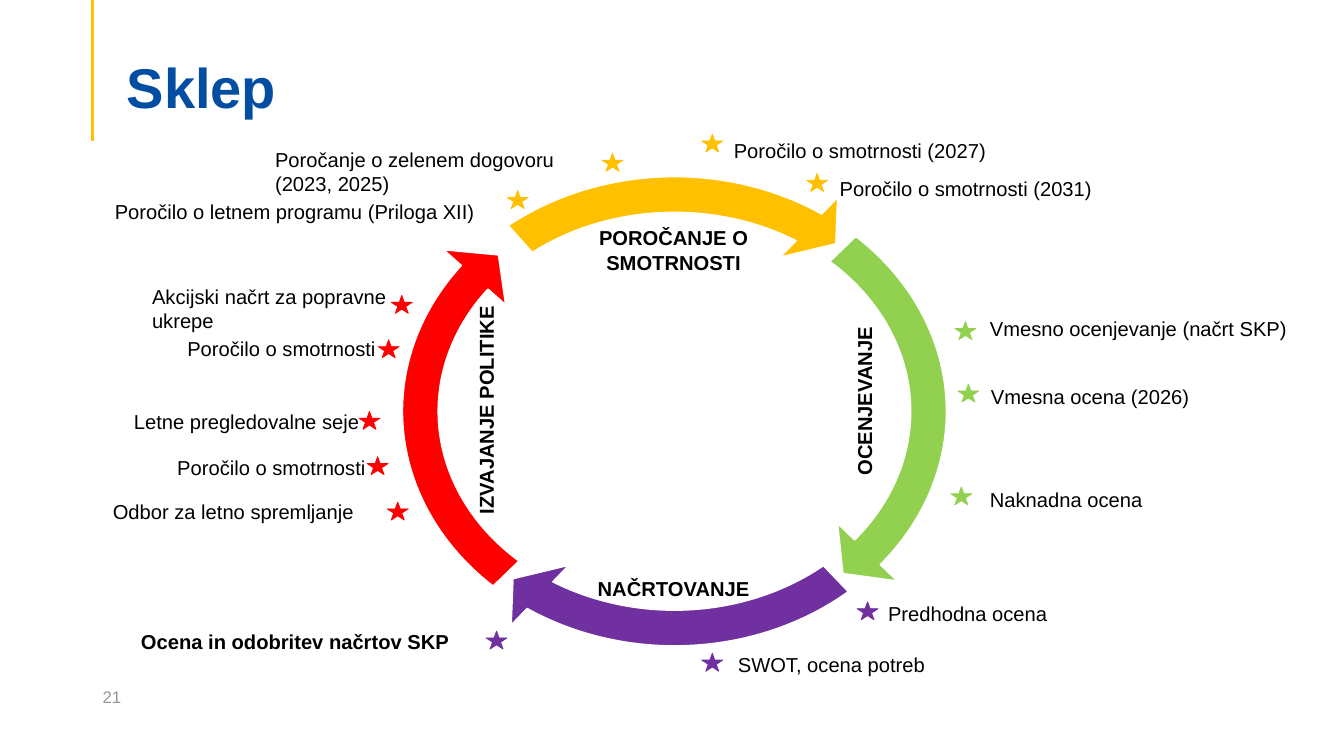
"""Build the closing slide: the policy cycle with its milestones."""
from pptx import Presentation
from pptx.dml.color import RGBColor
from pptx.enum.shapes import MSO_CONNECTOR, MSO_SHAPE
from pptx.enum.text import MSO_ANCHOR, PP_ALIGN
from pptx.oxml.ns import qn
from pptx.util import Inches, Pt
from lxml import etree

COLORS = {
    "yellow": "FFC000", "green": "92D050", "purple": "7030A0", "red": "FF0000",
    "blue": "034EA2", "gray": "979797", "black": "000000", "white": "FFFFFF",
}


def rgb(name):
    return RGBColor.from_string(COLORS[name])


def add_text(s, text, x, y, w, h, size=14.4, color="black", bold=False):
    sp = s.shapes.add_textbox(Inches(x), Inches(y), Inches(w), Inches(h))
    tf = sp.text_frame
    tf.word_wrap = True
    r = tf.paragraphs[0].add_run()
    r.text = text
    r.font.name = "Arial"
    r.font.size = Pt(size)
    r.font.bold = bold
    r.font.color.rgb = rgb(color)
    return sp


prs = Presentation()
prs.slide_width, prs.slide_height = Inches(13.33), Inches(7.5)
s = prs.slides.add_slide(prs.slide_layouts[6])

rule = s.shapes.add_connector(
    MSO_CONNECTOR.STRAIGHT, Inches(0.92), Inches(0), Inches(0.92), Inches(1.4))
rule.line.color.rgb = rgb("yellow")
rule.line.width = Pt(2.25)
etree.SubElement(rule._element.spPr, qn("a:effectLst"))

add_text(s, "Sklep", 1.16, 0.47, 6.16, 0.77, 40, "blue", True)

arrows = [
    ("green", 21.701, 189.637),
    ("purple", 75.713, 27.637),
    ("red", 128.318, 81.637),
    ("yellow", 183.701, 136.918),
]
for color, end, start in arrows:
    sp = s.shapes.add_shape(
        MSO_SHAPE.CIRCULAR_ARROW, Inches(3.76), Inches(1.52), Inches(5.86), Inches(5.12))
    for i, value in enumerate((0.069, 4.65, end, start, 0.08)):
        sp.adjustments[i] = value
    sp.shadow.inherit = False
    sp.fill.solid()
    sp.fill.fore_color.rgb = rgb(color)
    sp.line.color.rgb = rgb("white")
    sp.line.width = Pt(1)

phases = [
    ("NAČRTOVANJE", 5.24, 5.67, 2.88, 0.34, 0),
    ("IZVAJANJE POLITIKE", 3.56, 3.9, 2.52, 0.34, 270),
    ("OCENJEVANJE", 7.31, 3.81, 2.52, 0.34, 270),
    ("POROČANJE O SMOTRNOSTI", 5.24, 2.19, 2.88, 0.83, 0),
]
for text, x, y, w, h, angle in phases:
    sp = add_text(s, text, x, y, w, h, bold=True)
    sp.rotation = angle
    sp.text_frame.paragraphs[0].alignment = PP_ALIGN.CENTER

milestones = [
    ("yellow", 5.03, 1.89, "Poročilo o letnem programu (Priloga XII)", 1.04, 1.93, 4.74, 0.34),
    ("yellow", 5.97, 1.52, "Poročanje o zelenem dogovoru (2023, 2025)", 2.63, 1.41, 3.41, 0.59),
    ("yellow", 6.96, 1.33, "Poročilo o smotrnosti (2027)", 7.18, 1.32, 3.64, 0.34),
    ("yellow", 8, 1.72, "Poročilo o smotrnosti (2031)", 8.23, 1.7, 3.64, 0.34),
    ("green", 9.47, 3.19, "Vmesno ocenjevanje (načrt SKP)", 9.72, 3.09, 3.6, 0.34),
    ("green", 9.5, 3.81, "Vmesna ocena (2026)", 9.73, 3.76, 3.6, 0.34),
    ("green", 9.43, 4.83, "Naknadna ocena", 9.72, 4.79, 2.46, 0.34),
    ("purple", 8.5, 5.97, "Predhodna ocena", 8.71, 5.92, 2.46, 0.34),
    ("purple", 6.96, 6.48, "SWOT, ocena potreb", 7.22, 6.42, 3.34, 0.34),
    ("purple", 4.82, 6.26, "Ocena in odobritev načrtov SKP", 1.3, 6.19, 3.62, 0.34),
    ("red", 3.84, 4.98, "Odbor za letno spremljanje", 1.02, 4.91, 2.82, 0.34),
    ("red", 3.64, 4.53, "Poročilo o smotrnosti", 1.66, 4.47, 3.07, 0.34),
    ("red", 3.56, 4.08, "Letne pregledovalne seje", 1.23, 4.01, 3.01, 0.34),
    ("red", 3.75, 3.37, "Poročilo o smotrnosti", 1.76, 3.29, 2.17, 0.34),
    ("red", 3.88, 2.93, "Akcijski načrt za popravne ukrepe", 1.41, 2.77, 3.17, 0.59),
]
for color, star_x, star_y, text, x, y, w, h in milestones:
    sp = s.shapes.add_shape(
        MSO_SHAPE.STAR_5_POINT, Inches(star_x), Inches(star_y), Inches(0.21), Inches(0.18))
    sp.shadow.inherit = False
    sp.fill.solid()
    sp.fill.fore_color.rgb = rgb(color)
    sp.line.color.rgb = rgb(color)
    sp.line.width = Pt(0.5)
    add_text(s, text, x, y, w, h, bold=text.startswith("Ocena in"))

number = add_text(s, "21", 0.92, 6.71, 3, 0.4, 12, "gray")
number.text_frame.vertical_anchor = MSO_ANCHOR.MIDDLE

prs.save("out.pptx")
